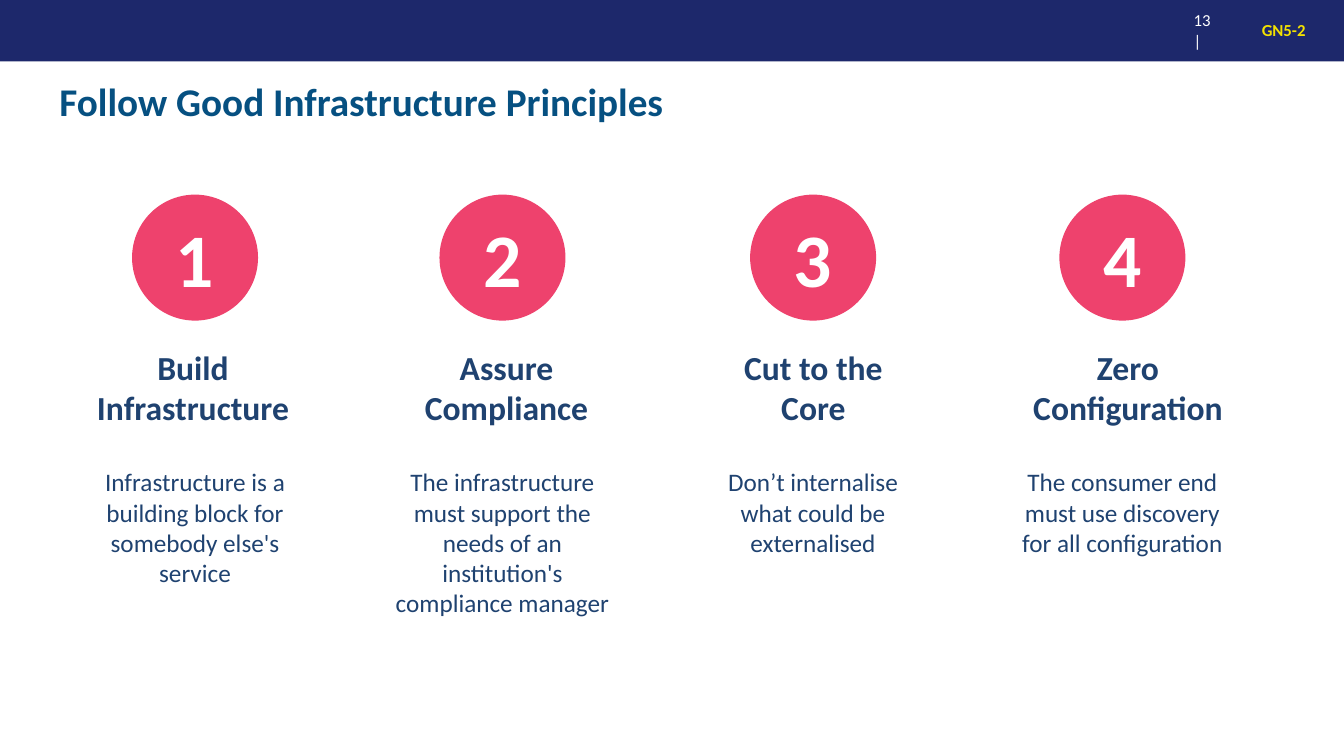
from dataclasses import dataclass

from lxml.etree import SubElement
from pptx import Presentation
from pptx.dml.color import RGBColor
from pptx.enum.shapes import MSO_SHAPE
from pptx.enum.text import MSO_ANCHOR, MSO_AUTO_SIZE, PP_ALIGN
from pptx.oxml.ns import qn
from pptx.util import Pt


@dataclass(frozen=True)
class Theme:
    font: str = "Calibri"
    navy: str = "1D286B"
    blue: str = "065081"
    ink: str = "1F4270"
    pink: str = "EE426D"
    gold: str = "F4E200"
    white: str = "FFFFFF"
    small: int = 12
    body: int = 18
    head: int = 24
    title: int = 28
    digit: int = 54


@dataclass(frozen=True)
class Pillar:
    mid: float
    head: str
    head_mid: float
    head_wide: float
    body: str
    body_wide: float
    lines: int


THEME = Theme()
WIDE, HIGH = 960, 540
DISC = 90
PILLARS = [
    Pillar(139.3, "Build\nInfrastructure", 137.9, 183.6,
           "Infrastructure is a building block for somebody else's service",
           185.8, 4),
    Pillar(358.9, "Assure\nCompliance", 361.8, 147.6,
           "The infrastructure must support the needs of an institution's "
           "compliance manager", 182.2, 5),
    Pillar(580.8, "Cut to the Core", 581, 159.8,
           "Don’t internalise what could be externalised", 136.8, 3),
    Pillar(801.7, "Zero Configuration", 805.7, 159.8,
           "The consumer end must use discovery for all configuration",
           175, 3),
]


def write(shape, text, size, color, bold=False, align=PP_ALIGN.CENTER,
          anchor=MSO_ANCHOR.MIDDLE, fit=MSO_AUTO_SIZE.NONE, space=1, tab=None):
    frame = shape.text_frame
    frame.text = text
    frame.word_wrap = True
    frame.auto_size = fit
    frame.vertical_anchor = anchor
    for para in frame.paragraphs:
        if tab:
            stops = SubElement(para._p.get_or_add_pPr(), qn("a:tabLst"))
            SubElement(stops, qn("a:tab"), pos=str(Pt(tab)), algn="l")
        para.alignment = align
        para.line_spacing = space
        font = para.font
        font.name = THEME.font
        font.size = Pt(size)
        font.bold = bold
        font.color.rgb = RGBColor.from_string(color)


def add_text(slide, left, top, wide, high, text, **form):
    box = slide.shapes.add_textbox(Pt(left), Pt(top), Pt(wide), Pt(high))
    write(box, text, **form)
    return box


def add_solid(slide, kind, left, top, wide, high, color):
    shape = slide.shapes.add_shape(kind, Pt(left), Pt(top), Pt(wide), Pt(high))
    shape.shadow.inherit = False
    shape.fill.solid()
    shape.fill.fore_color.rgb = RGBColor.from_string(color)
    shape.line.fill.background()
    return shape


def add_banner(slide):
    add_solid(slide, MSO_SHAPE.RECTANGLE, 0, -2.9, WIDE, 46.8, THEME.navy)
    add_text(slide, 845.6, 8.6, 45, 26, "13\t|", size=THEME.small,
             color=THEME.white, align=PP_ALIGN.LEFT, tab=25.5)
    add_text(slide, 894.2, 10.8, 65.8, 23, "GN5-2", size=THEME.small,
             color=THEME.gold, bold=True, align=PP_ALIGN.LEFT, space=0.9)


def set_title(slide, text):
    title = slide.shapes.title
    title.left, title.top = Pt(35.3), Pt(57.6)
    title.width, title.height = Pt(779), Pt(33.8)
    write(title, text, size=THEME.title, color=THEME.blue, bold=True,
          align=PP_ALIGN.LEFT, space=0.9)


def add_pillar(slide, number, pillar):
    disc = add_solid(slide, MSO_SHAPE.OVAL, pillar.mid - DISC / 2, 139,
                     DISC, DISC, THEME.pink)
    write(disc, str(number), size=THEME.digit, color=THEME.white, bold=True)
    flow = dict(color=THEME.ink, anchor=MSO_ANCHOR.TOP,
                fit=MSO_AUTO_SIZE.SHAPE_TO_FIT_TEXT)
    add_text(slide, pillar.head_mid - pillar.head_wide / 2, 244.1,
             pillar.head_wide, 65.5, pillar.head,
             size=THEME.head, bold=True, **flow)
    add_text(slide, pillar.mid - pillar.body_wide / 2, 329.8,
             pillar.body_wide, 7.2 + 21.8 * pillar.lines, pillar.body,
             size=THEME.body, **flow)


def main():
    deck = Presentation()
    deck.slide_width, deck.slide_height = Pt(WIDE), Pt(HIGH)
    slide = deck.slides.add_slide(deck.slide_layouts.get_by_name("Title Only"))
    add_banner(slide)
    set_title(slide, "Follow Good Infrastructure Principles")
    for number, pillar in enumerate(PILLARS, 1):
        add_pillar(slide, number, pillar)
    deck.save("out.pptx")


if __name__ == "__main__":
    main()
